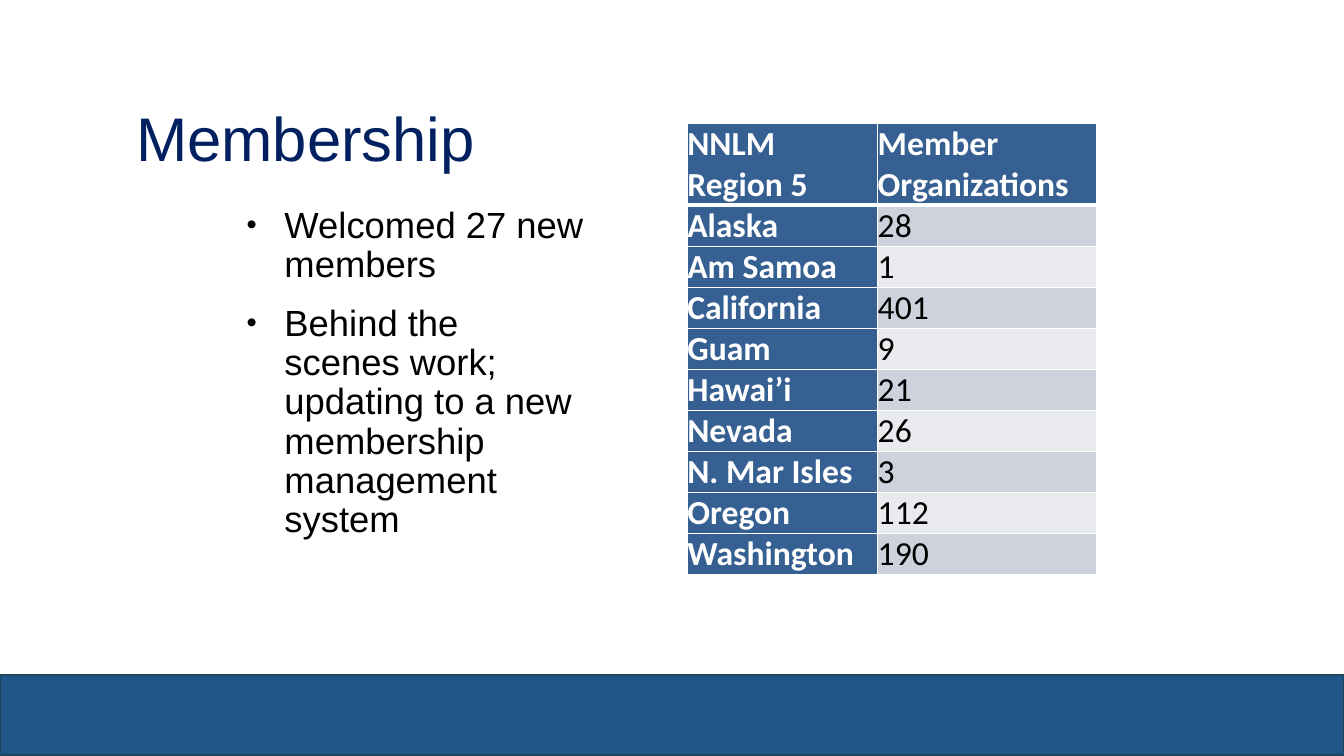
from lxml.etree import SubElement
from pptx import Presentation
from pptx.dml.color import RGBColor
from pptx.enum.shapes import MSO_SHAPE
from pptx.enum.text import MSO_ANCHOR, MSO_AUTO_SIZE, PP_ALIGN
from pptx.oxml.ns import qn
from pptx.util import Pt

WHITE = RGBColor(0xFF, 0xFF, 0xFF)
BLACK = RGBColor(0, 0, 0)
NAVY = RGBColor(0x00, 0x20, 0x60)
BAND_FILL = RGBColor(0x20, 0x55, 0x8A)
BAND_LINE = RGBColor(0x20, 0x45, 0x5A)
HEADER_FILL = RGBColor(0x36, 0x60, 0x92)
ROW_FILLS = (RGBColor(0xE8, 0xEA, 0xEE), RGBColor(0xCE, 0xD2, 0xDC))

POINTS = [
    "Welcomed 27 new members",
    "Behind the scenes work; updating to a new membership management system",
]
MEMBERS = [
    ("NNLM Region 5", "Member Organizations"),
    ("Alaska", "28"),
    ("Am Samoa", "1"),
    ("California", "401"),
    ("Guam", "9"),
    ("Hawai’i", "21"),
    ("Nevada", "26"),
    ("N. Mar Isles", "3"),
    ("Oregon", "112"),
    ("Washington", "190"),
]


def write(paragraph, text, *, size, color, font="Arial", bold=False, spacing=None, before=0):
    paragraph.text = text
    paragraph.alignment = PP_ALIGN.LEFT
    paragraph.space_before = Pt(before)
    if spacing:
        paragraph.line_spacing = spacing
    paragraph.font.name = font
    paragraph.font.size = Pt(size)
    paragraph.font.bold = bold
    paragraph.font.color.rgb = color


def add_bullet(paragraph, indent):
    properties = paragraph._p.get_or_add_pPr()
    properties.set("marL", str(Pt(indent)))
    properties.set("indent", str(-Pt(indent)))
    bullet_color = SubElement(properties, qn("a:buClr"))
    SubElement(bullet_color, qn("a:srgbClr"), val=str(BLACK))
    SubElement(properties, qn("a:buSzPct"), val="80000")
    SubElement(properties, qn("a:buFont"), typeface="Arial")
    SubElement(properties, qn("a:buChar"), char="•")


def set_borders(cell, bottom):
    """Draw white borders, before the cell gets its fill."""
    properties = cell._tc.get_or_add_tcPr()
    for side, width in (("L", 1), ("R", 1), ("T", 1), ("B", bottom)):
        border = SubElement(properties, qn(f"a:ln{side}"), w=str(Pt(width)))
        fill = SubElement(border, qn("a:solidFill"))
        SubElement(fill, qn("a:srgbClr"), val=str(WHITE))


class MembershipSlide:
    def __init__(self, presentation):
        self.slide = presentation.slides.add_slide(presentation.slide_layouts[1])
        self.shapes = self.slide.shapes

    def place(self, holder, left, top, width, height):
        holder.left, holder.top = Pt(left), Pt(top)
        holder.width, holder.height = Pt(width), Pt(height)
        holder.text_frame.auto_size = MSO_AUTO_SIZE.NONE
        holder.text_frame.word_wrap = True
        return holder.text_frame

    def band(self, left, top, width, height):
        band = self.shapes.add_shape(
            MSO_SHAPE.RECTANGLE, Pt(left), Pt(top), Pt(width), Pt(height))
        band.shadow.inherit = False
        band.fill.solid()
        band.fill.fore_color.rgb = BAND_FILL
        band.line.color.rgb = BAND_LINE
        band.line.width = Pt(1.5)

    def title(self, text, *place):
        frame = self.place(self.shapes.title, *place)
        frame.vertical_anchor = MSO_ANCHOR.MIDDLE
        write(frame.paragraphs[0], text, size=44, color=NAVY, spacing=0.9)

    def bullets(self, points, *place):
        frame = self.place(self.slide.placeholders[1], *place)
        for index, point in enumerate(points):
            paragraph = frame.add_paragraph() if index else frame.paragraphs[0]
            add_bullet(paragraph, indent=27)
            write(paragraph, point, size=26, color=BLACK, spacing=0.9,
                  before=14 if index else 0)

    def table(self, rows, left, top, column_widths, header_height, row_height):
        height = header_height + row_height * (len(rows) - 1)
        table = self.shapes.add_table(
            len(rows), len(column_widths), Pt(left), Pt(top),
            Pt(sum(column_widths)), Pt(height)).table
        table.first_col = True
        for column, width in zip(table.columns, column_widths):
            column.width = Pt(width)
        for r, values in enumerate(rows):
            table.rows[r].height = Pt(row_height if r else header_height)
            for c, value in enumerate(values):
                self.cell(table.cell(r, c), value, r, heading=r == 0 or c == 0)

    def cell(self, cell, value, row, heading):
        cell.margin_left = cell.margin_right = cell.margin_top = cell.margin_bottom = 0
        cell.vertical_anchor = MSO_ANCHOR.MIDDLE
        set_borders(cell, bottom=1 if row else 3)
        cell.fill.solid()
        cell.fill.fore_color.rgb = HEADER_FILL if heading else ROW_FILLS[row % 2]
        write(cell.text_frame.paragraphs[0], value, size=24, font="Calibri",
              bold=heading, color=WHITE if heading else BLACK)


def main():
    presentation = Presentation()
    presentation.slide_width, presentation.slide_height = Pt(960), Pt(540)
    slide = MembershipSlide(presentation)
    slide.band(0, 482.4, 960, 57)
    slide.title("Membership", 90, 48, 778, 106.5)
    slide.bullets(POINTS, 169, 144, 255.6, 339)
    slide.table(MEMBERS, 491, 88, column_widths=(136, 156),
                header_height=57.6, row_height=28)
    presentation.save("out.pptx")


if __name__ == "__main__":
    main()
